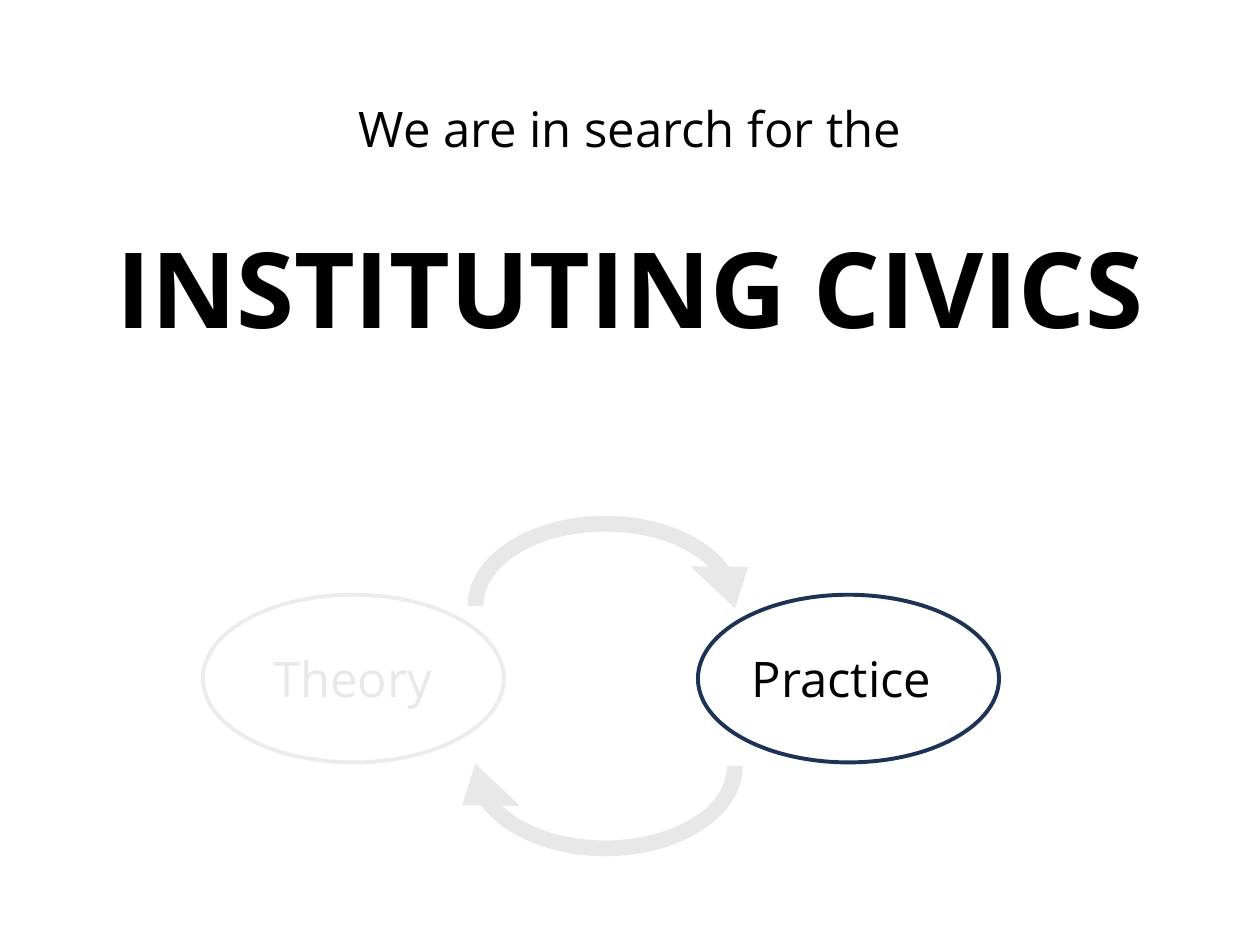
from lxml import etree
from pptx import Presentation
from pptx import util as u
from pptx.dml.color import RGBColor
from pptx.enum import shapes, text
from pptx.oxml import ns

COLORS = {"ink": "000000", "navy": "1E3256", "veil": "FFFFFF"}
FONT = "Open Sans"


def color(name):
    return RGBColor.from_string(COLORS[name])


def style_text(para, size, bold=False):
    for span in para.runs:
        span.font.name = FONT
        span.font.size = u.Pt(size)
        span.font.bold = bold
        span.font.color.rgb = color("ink")


deck = Presentation()
deck.slide_width, deck.slide_height = u.Cm(25.4), u.Cm(19.05)
page = deck.slides.add_slide(deck.slide_layouts[5])

title = page.shapes.title
title.left, title.top = u.Cm(0.61), u.Cm(1.85)
title.width, title.height = u.Cm(24.18), u.Cm(5.21)
frame = title.text_frame
frame.text = "We are in search for the\nINSTITUTING CIVICS"
frame.word_wrap = True
frame.auto_size = text.MSO_AUTO_SIZE.NONE
frame.vertical_anchor = text.MSO_ANCHOR.TOP
lead, headline = frame.paragraphs
for para in (lead, headline):
    para.alignment = text.PP_ALIGN.CENTER
style_text(lead, 28)
style_text(headline, 60, True)
headline.space_before = u.Pt(38)

for label, oval_left, label_left in (("Theory", 4.09, 5.26), ("Practice", 14.07, 14.91)):
    oval = page.shapes.add_shape(
        shapes.MSO_SHAPE.OVAL, u.Cm(oval_left), u.Cm(11.99), u.Cm(6.07), u.Cm(3.38))
    oval.shadow.inherit = False
    oval.fill.background()
    oval.line.color.rgb = color("navy")
    oval.line.width = u.Pt(2.25)
    box = page.shapes.add_textbox(u.Cm(label_left), u.Cm(12.95), u.Cm(4.27), u.Cm(1.45))
    box.text_frame.word_wrap = True
    box.text_frame.text = label
    style_text(box.text_frame.paragraphs[0], 28)

for top, rotation in ((10.01, 0), (13.26, 180)):
    arrow = page.shapes.add_shape(
        shapes.MSO_SHAPE.CIRCULAR_ARROW, u.Cm(9.04), u.Cm(top), u.Cm(6.32), u.Cm(4.39))
    arrow.rotation = rotation
    for index, value in enumerate((0.065, 11.423, 204.997, 108, 0.125)):
        arrow.adjustments[index] = value
    arrow.shadow.inherit = False
    arrow.fill.solid()
    arrow.fill.fore_color.rgb = color("ink")
    arrow.line.color.rgb = color("ink")
    arrow.line.width = u.Pt(1)

outline = [(u.Cm(x), u.Cm(y)) for x, y in (
    (15.72, 15.77), (13.77, 14.71), (13.79, 13), (15.72, 11.81),
    (14.91, 9.7), (2.29, 9.7), (2.67, 17.96), (14.99, 17.88))]
builder = page.shapes.build_freeform(*outline[0])
builder.add_line_segments(outline[1:], close=True)
veil = builder.convert_to_shape()
veil.shadow.inherit = False
veil.fill.solid()
veil.fill.fore_color.rgb = color("veil")
veil.line.fill.background()
tint = veil.fill._xPr.find(ns.qn("a:solidFill"))[0]
etree.SubElement(tint, ns.qn("a:alpha"), val="91000")

deck.save("out.pptx")
